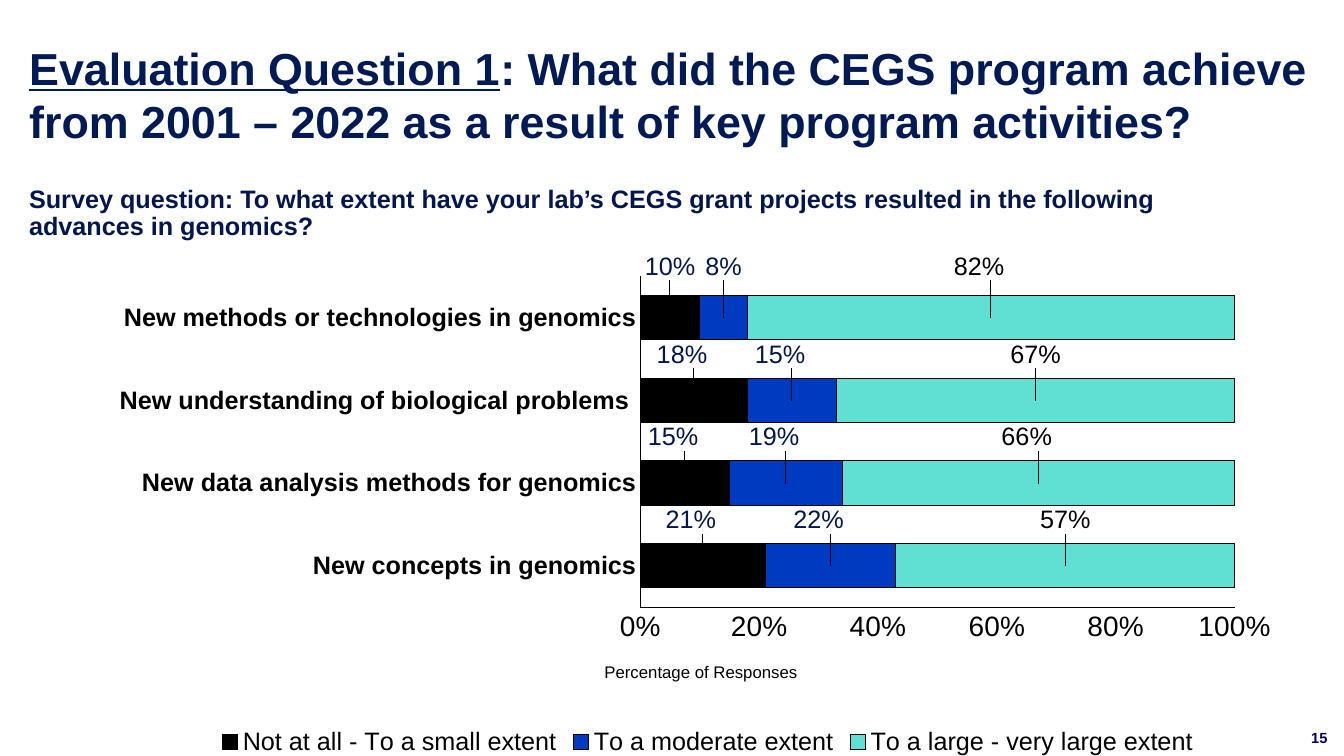
from lxml.etree import SubElement
from pptx import Presentation
from pptx.chart.data import CategoryChartData
from pptx.dml.color import RGBColor
from pptx.enum.chart import (XL_CHART_TYPE, XL_LABEL_POSITION,
                             XL_LEGEND_POSITION, XL_TICK_MARK)
from pptx.enum.text import MSO_ANCHOR, MSO_AUTO_SIZE, PP_ALIGN
from pptx.oxml import parse_xml
from pptx.oxml.ns import nsdecls, qn
from pptx.util import Pt

# Content
COLORS = {"title": "001A56", "question": "04164E", "page": "000064", "text": "000000",
          "small": "000000", "moderate": "003AC0", "large": "5FE0D3"}
TITLE = [("Evaluation Question 1", True),
         (": What did the CEGS program achieve from 2001 – 2022 "
          "as a result of key program activities?", False)]
QUESTION = ("Survey question: To what extent have your lab’s CEGS grant projects "
            "resulted in the following advances in genomics?")
PAGE_NUMBER = "15"
AXIS_TITLE = "Percentage of Responses"
ADVANCES = ["New concepts in genomics", "New data analysis methods for genomics",
            "New understanding of biological problems ",
            "New methods or technologies in genomics"]
# Name, fill, label colour, values, sideways shift of each label
ANSWERS = [
    ("Not at all - To a small extent", "small", "question",
     [0.21, 0.15, 0.18, 0.1], [-0.01, -0.01, -0.01, 0]),
    ("To a moderate extent", "moderate", "question",
     [0.22, 0.19, 0.15, 0.08], [-0.01, -0.01, -0.01, 0]),
    ("To a large - very large extent", "large", "text",
     [0.57, 0.66, 0.67, 0.82], [0, -0.01, 0, -0.01]),
]
LABEL_RISE = [-0.09, -0.09, -0.09, -0.1]


def color(name):
    return RGBColor.from_string(COLORS[name])


def set_font(font, size, name="text", bold=False):
    font.name, font.size, font.bold = "Arial", Pt(size), bold
    font.color.rgb = color(name)


def write(frame, spans, size, name, spacing=1.0, anchor=MSO_ANCHOR.TOP):
    frame.word_wrap = True
    frame.auto_size = MSO_AUTO_SIZE.NONE
    frame.vertical_anchor = anchor
    para = frame.paragraphs[0]
    para.alignment, para.line_spacing = PP_ALIGN.LEFT, spacing
    for text, underline in spans:
        span = para.add_run()
        span.text = text
        set_font(span.font, size, name, bold=True)
        span.font.underline = underline


def outline(line):
    line.color.rgb = color("text")
    line.width = Pt(0.75)


def place(before, **values):
    """Add a manual chart layout right after the given element."""
    layout = parse_xml(f'<c:layout {nsdecls("c")}><c:manualLayout/></c:layout>')
    for tag, value in values.items():
        SubElement(layout[0], qn(f"c:{tag}")).set("val", str(value))
    before.addnext(layout)


deck = Presentation()
deck.slide_width, deck.slide_height = Pt(960), Pt(540)
page = deck.slides.add_slide(deck.slide_layouts[5])

# Title, survey question and page number
title = page.shapes.title
title.left, title.top, title.width, title.height = Pt(13.7), Pt(25.2), Pt(936.7), Pt(85)
write(title.text_frame, TITLE, 32, "title")
question = page.shapes.add_textbox(Pt(13.7), Pt(129.6), Pt(903.6), Pt(28.8))
write(question.text_frame, [(QUESTION, False)], 18, "question", spacing=0.9)
number = page.shapes.add_textbox(Pt(929.5), Pt(512.6), Pt(27.4), Pt(28.8))
write(number.text_frame, [(PAGE_NUMBER, False)], 10.5, "page", anchor=MSO_ANCHOR.MIDDLE)

# Chart
data = CategoryChartData(number_format="0%")
data.categories = ADVANCES
for answer, _, _, values, _ in ANSWERS:
    data.add_series(answer, values)
chart = page.shapes.add_chart(XL_CHART_TYPE.BAR_STACKED_100, Pt(84.2), Pt(178.6),
                              Pt(842.4), Pt(365), data).chart
set_font(chart.font, 10, "title")
chart.has_title = False
chart.has_legend = True
chart.legend.position = XL_LEGEND_POSITION.BOTTOM
chart.legend.include_in_layout = False
set_font(chart.legend.font, 18)

# Plot area
plot = chart.plots[0]
plot.gap_width, plot.overlap, plot.vary_by_categories = 87, 100, False
area = chart._chartSpace.chart.plotArea
for old in area.findall(qn("c:layout")):
    area.remove(old)
marker = SubElement(area, qn("c:layout"))
area.insert(0, marker)
place(marker, layoutTarget="inner", xMode="edge", yMode="edge",
      x=0.443, y=0.051, w=0.504, h=0.648)
area.remove(marker)

# Axes
for axis, size, bold in ((chart.category_axis, 18, True), (chart.value_axis, 20, False)):
    axis.has_major_gridlines = False
    axis.major_tick_mark = axis.minor_tick_mark = XL_TICK_MARK.NONE
    set_font(axis.tick_labels.font, size, bold=bold)
    outline(axis.format.line)
scale = chart.value_axis
scale.minimum_scale, scale.maximum_scale, scale.major_unit = 0, 1, 0.2
scale.tick_labels.number_format = "0%"
scale.tick_labels.number_format_is_linked = False
frame = scale.axis_title.text_frame
frame.text = AXIS_TITLE
set_font(frame.paragraphs[0].runs[0].font, 12)
heading = scale.axis_title._element
for old in heading.findall(qn("c:layout")):
    heading.remove(old)
place(heading.find(qn("c:tx")), xMode="edge", yMode="edge", x=0.41, y=0.8)

# Bars, with the labels lifted above them
for series, (_, fill, ink, _, shifts) in zip(plot.series, ANSWERS):
    series.format.fill.solid()
    series.format.fill.fore_color.rgb = color(fill)
    outline(series.format.line)
    labels = series.data_labels
    labels.show_value = True
    labels.number_format, labels.number_format_is_linked = "0%", False
    labels.position = XL_LABEL_POSITION.CENTER
    set_font(labels.font, 18, ink)
    for index, (shift, rise) in enumerate(zip(shifts, LABEL_RISE)):
        label = series.points[index].data_label
        set_font(label.font, 18, ink)
        label.position = XL_LABEL_POSITION.CENTER
        element = labels._element.findall(qn("c:dLbl"))[index]
        place(element.find(qn("c:idx")), x=shift, y=rise)

deck.save("out.pptx")
